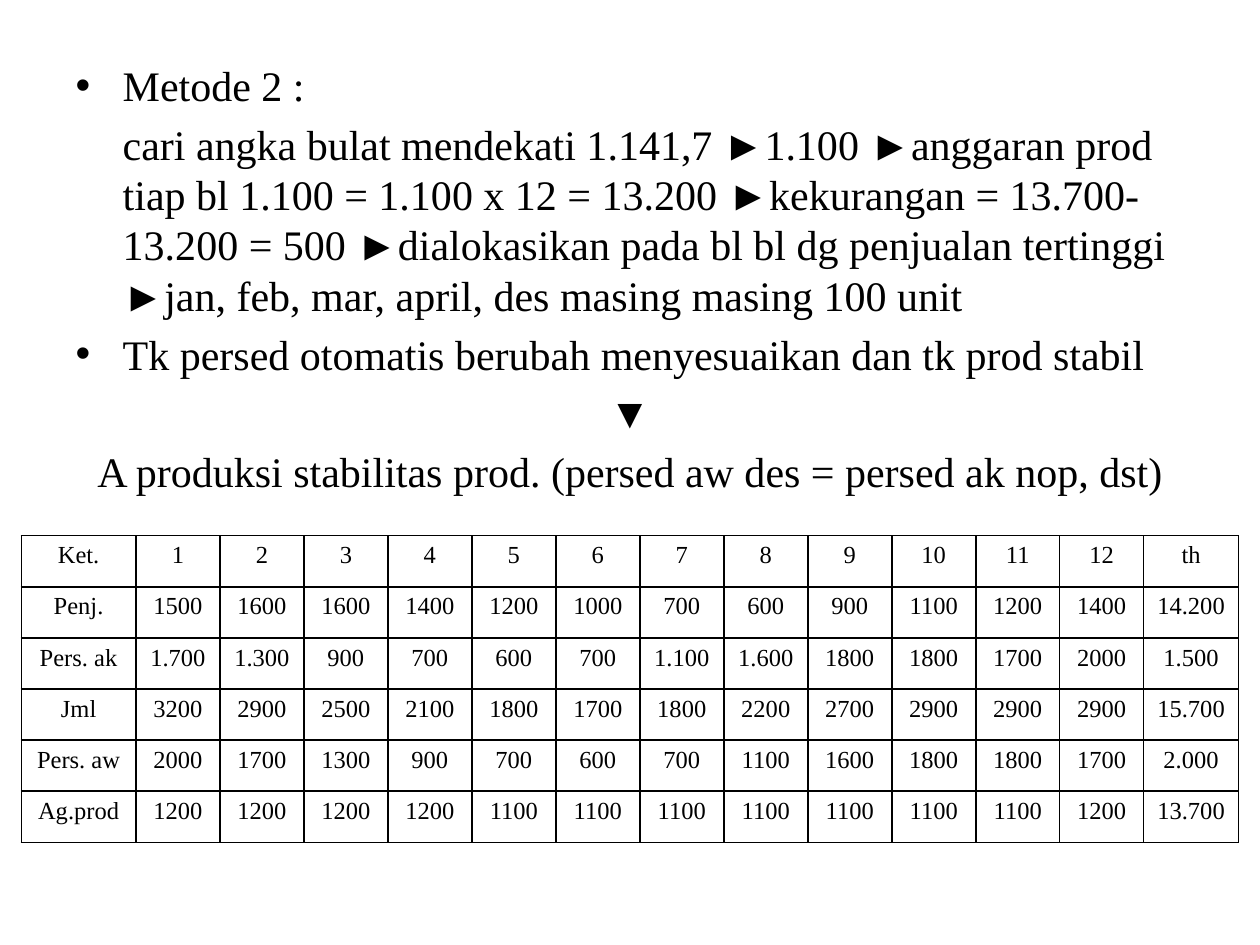
from lxml import etree
from pptx import Presentation
from pptx.dml.color import RGBColor
from pptx.enum.text import MSO_ANCHOR, MSO_AUTO_SIZE, PP_ALIGN
from pptx.oxml.ns import qn
from pptx.util import Cm, Pt

LEFT, CENTER = PP_ALIGN.LEFT, PP_ALIGN.CENTER
TOP = MSO_ANCHOR.TOP
NO_AUTOFIT = MSO_AUTO_SIZE.NONE

COLORS = {"text": "000000", "border": "000000"}
FONT = "Times New Roman"
HANGING = 0.95

# Paragraphs: text, bulleted, alignment
METHOD = [
    ("Metode 2 :", True, LEFT),
    ("cari angka bulat mendekati 1.141,7 ►1.100 ►anggaran prod tiap bl 1.100 = "
     "1.100 x 12 = 13.200 ►kekurangan = 13.700-13.200 = 500 ►dialokasikan pada "
     "bl bl dg penjualan tertinggi ►jan, feb, mar, april, des masing masing "
     "100 unit", False, LEFT),
    ("Tk persed otomatis berubah menyesuaikan dan tk prod stabil", True, LEFT),
    ("▼", False, CENTER),
    ("A produksi stabilitas prod. (persed aw des = persed ak nop, dst)", False, CENTER),
]

# Row label, then the twelve months and the year
BUDGET = [
    ("Ket.", "1 2 3 4 5 6 7 8 9 10 11 12 th"),
    ("Penj.", "1500 1600 1600 1400 1200 1000 700 600 900 1100 1200 1400 14.200"),
    ("Pers. ak", "1.700 1.300 900 700 600 700 1.100 1.600 1800 1800 1700 2000 1.500"),
    ("Jml", "3200 2900 2500 2100 1800 1700 1800 2200 2700 2900 2900 2900 15.700"),
    ("Pers. aw", "2000 1700 1300 900 700 600 700 1100 1600 1800 1800 1700 2.000"),
    ("Ag.prod", "1200 1200 1200 1200 1100 1100 1100 1100 1100 1100 1100 1200 13.700"),
]


def write(paragraph, text, size=14, align=CENTER, color="text"):
    paragraph.alignment = align
    run = paragraph.add_run()
    run.text = text
    run.font.name = FONT
    run.font.size = Pt(size)
    run.font.color.rgb = RGBColor.from_string(COLORS[color])


def set_bullet(paragraph, bulleted, margin):
    props = paragraph._p.get_or_add_pPr()
    props.set("marL", str(Cm(margin)))
    props.set("indent", str(-Cm(margin) if bulleted else 0))
    if bulleted:
        etree.SubElement(props, qn("a:buChar")).set("char", "•")
    else:
        etree.SubElement(props, qn("a:buNone"))


def set_borders(cell, width=1):
    props = cell._tc.get_or_add_tcPr()
    for position, side in enumerate(("a:lnL", "a:lnR", "a:lnT", "a:lnB")):
        line = etree.Element(qn(side), w=str(Pt(width)))
        fill = etree.SubElement(line, qn("a:solidFill"))
        etree.SubElement(fill, qn("a:srgbClr")).set("val", COLORS["border"])
        props.insert(position, line)


class BudgetSlide:
    def __init__(self, presentation):
        self.slide = presentation.slides.add_slide(presentation.slide_layouts[1])
        title = self.slide.shapes.title
        title.element.getparent().remove(title.element)

    def body(self, paragraphs, left, top, width, height, size=24):
        body = self.slide.placeholders[1]
        body.left, body.top = Cm(left), Cm(top)
        body.width, body.height = Cm(width), Cm(height)
        frame = body.text_frame
        frame.word_wrap = True
        frame.auto_size = NO_AUTOFIT
        frame.vertical_anchor = TOP
        for index, (text, bulleted, align) in enumerate(paragraphs):
            paragraph = frame.add_paragraph() if index else frame.paragraphs[0]
            write(paragraph, text, size=size, align=align)
            set_bullet(paragraph, bulleted, HANGING if align == LEFT else 0)

    def table(self, rows, widths, left, top, height):
        grid = self.slide.shapes.add_table(
            len(rows), len(widths), Cm(left), Cm(top), Cm(sum(widths)), Cm(height)
        ).table
        grid.first_row = grid.horz_banding = False
        for column, width in zip(grid.columns, widths):
            column.width = Cm(width)
        for row, (label, values) in enumerate(rows):
            for column, text in enumerate([label, *values.split()]):
                cell = grid.cell(row, column)
                cell.margin_left = cell.margin_right = Cm(0.1)
                cell.fill.background()
                set_borders(cell)
                write(cell.text_frame.paragraphs[0], text)


def main():
    presentation = Presentation()
    presentation.slide_width, presentation.slide_height = Cm(25.4), Cm(19.05)
    slide = BudgetSlide(presentation)

    # Explanation of the method
    slide.body(METHOD, left=1.27, top=1.07, width=22.86, height=15.32)

    # Production budget: label, twelve equal months, year total
    label_width, year_width, table_width = 2.31, 1.91, 24.54
    month_width = (table_width - label_width - year_width) / 12
    widths = [label_width] + [month_width] * 12 + [year_width]
    slide.table(BUDGET, widths, left=0.43, top=10.8, height=6.18)

    presentation.save("out.pptx")


if __name__ == "__main__":
    main()
